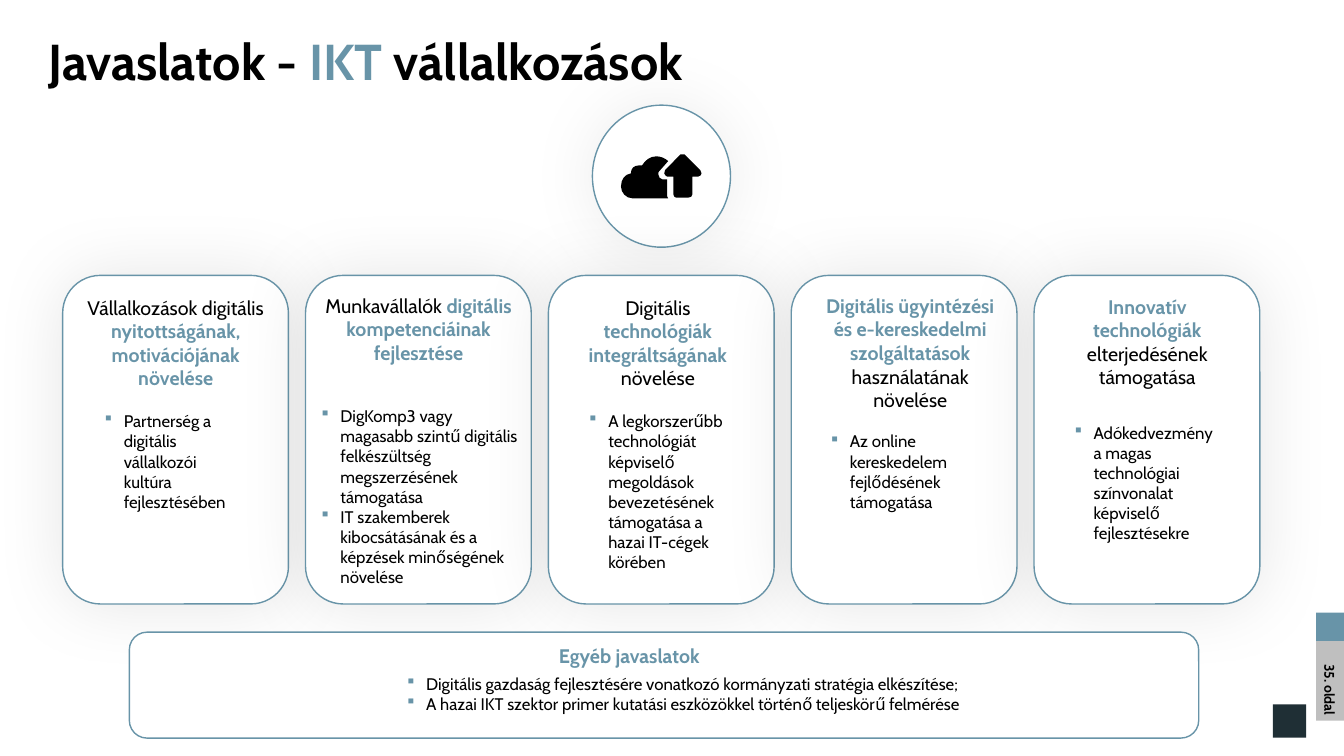
"""Build the slide of proposals for ICT enterprises."""
import pptx
import pptx.dml.color
import pptx.enum.shapes
import pptx.enum.text
import pptx.oxml
import pptx.oxml.ns
import pptx.util

Cm = pptx.util.Cm
Pt = pptx.util.Pt
qn = pptx.oxml.ns.qn
shape_kind = pptx.enum.shapes.MSO_SHAPE
align = pptx.enum.text.PP_ALIGN

COLORS = {"accent": "6894A8", "black": "000000", "white": "FFFFFF",
          "dark": "1F2F35", "gray": "BFBFBF"}
RGB = {name: pptx.dml.color.RGBColor.from_string(value) for name, value in COLORS.items()}

deck = pptx.Presentation()
deck.slide_width, deck.slide_height = Cm(33.87), Cm(19.05)
page = deck.slides.add_slide(deck.slide_layouts[6])


def add_panel(kind, place, fill, line=None, blur=None, alpha=None):
    """Add a filled preset shape, with an outline and a soft shadow if given."""
    panel = page.shapes.add_shape(kind, *map(Cm, place))
    panel.shadow.inherit = False
    panel.fill.solid()
    panel.fill.fore_color.rgb = RGB[fill]
    if line:
        panel.line.color.rgb = RGB[line]
        panel.line.width = Pt(1)
    else:
        panel.line.fill.background()
    if blur:
        effects = panel.element.spPr.find(qn("a:effectLst"))
        effects.append(pptx.oxml.parse_xml(
            f'<a:outerShdw xmlns:a="http://schemas.openxmlformats.org/drawingml/2006/main" '
            f'blurRad="{Pt(blur)}" dist="0" algn="ctr" rotWithShape="0">'
            f'<a:srgbClr val="{COLORS["black"]}"><a:alpha val="{alpha * 1000}"/></a:srgbClr>'
            f'</a:outerShdw>'))
    return panel


def write(place, paragraphs, size, alignment=align.LEFT, indent=None, panel=None):
    """Write paragraphs of (text, colour, bold) spans, bulleted if indented."""
    box = panel or page.shapes.add_textbox(*map(Cm, place))
    frame = box.text_frame
    frame.word_wrap = True
    for index, spans in enumerate(paragraphs):
        para = frame.paragraphs[0] if index == 0 else frame.add_paragraph()
        para.alignment = alignment
        if indent:
            properties = para._p.get_or_add_pPr()
            properties.set("marL", str(Cm(indent)))
            properties.set("indent", str(Cm(-0.48)))
            color = properties.makeelement(qn("a:buClr"), {})
            color.append(color.makeelement(qn("a:srgbClr"), {"val": COLORS["accent"]}))
            properties.append(color)
            properties.append(properties.makeelement(qn("a:buFont"), {"typeface": "Wingdings"}))
            properties.append(properties.makeelement(qn("a:buChar"), {"char": "§"}))
        for text, color, bold in spans:
            span = para.add_run()
            span.text = text
            formats = {"name": "Cabin", "size": Pt(size), "bold": bold}
            for name, value in formats.items():
                setattr(span.font, name, value)
            span.font.color.rgb = RGB[color]
    return frame


add_panel(shape_kind.RECTANGLE, (32.08, 17.75, 0.84, 0.84), "dark")
title = write((0.97, 0.81, 24.66, 1.96),
              [[("Javaslatok - ", "black", True), ("IKT ", "accent", True),
                ("vállalkozások", "black", True)]], 36)
title.paragraphs[0].line_spacing = 0.9

add_panel(shape_kind.OVAL, (14.93, 2.65, 3.48, 3.58), "white", "accent", 49, 7)

cloud = [(1681, 493), (1681, 495, 1684, 500, 1684, 500), (1595, 500),
         (1577, 500, 1565, 485, 1565, 470), (1565, 452, 1575, 439, 1590, 437),
         (1590, 424, 1598, 417, 1610, 417), (1613, 417, 1615, 417, 1618, 417),
         (1626, 404, 1638, 394, 1654, 394), (1666, 394, 1676, 399, 1684, 406),
         (1661, 432), (1659, 432, 1659, 437, 1659, 439),
         (1659, 445, 1664, 452, 1669, 452), (1681, 452)]
arrow = [(1722, 389), (1715, 389), (1676, 429),
         (1674, 432, 1674, 434, 1674, 437), (1674, 439, 1679, 445, 1681, 445),
         (1697, 445), (1697, 490), (1697, 495, 1702, 498, 1704, 498),
         (1735, 498), (1740, 498, 1745, 495, 1745, 490), (1745, 445),
         (1760, 445), (1765, 445, 1768, 439, 1768, 437),
         (1768, 434, 1765, 432, 1765, 429), (1725, 389)]
for outline in (cloud, arrow):
    builder = page.shapes.build_freeform(*outline[0], scale=Cm(0.01))
    for segment in outline[1:]:
        builder.add_line_segments(list(zip(segment[::2], segment[1::2])), close=False)
    builder.add_line_segments([], close=True)
    icon = builder.convert_to_shape()
    icon.shadow.inherit = False
    icon.fill.solid()
    icon.fill.fore_color.rgb = RGB["black"]
    icon.line.fill.background()
    pieces = iter(list(icon.element.iter(qn("a:lnTo"))))
    for segment in outline[1:]:
        first = next(pieces)
        if len(segment) == 6:
            curve = first.makeelement(qn("a:cubicBezTo"), {})
            first.addprevious(curve)
            for piece in (first, next(pieces), next(pieces)):
                curve.append(piece[0])
                piece.getparent().remove(piece)

cards = [
    ((1.79, 7.32, 5.28, 3.25),
     [("Vállalkozások digitális ", "black", False),
      ("nyitottságának, motivációjának növelése", "accent", True)],
     (2.39, 10.23, 4.09, 3.33),
     ["Partnerség a digitális vállalkozói kultúra fejlesztésében"]),
    ((7.87, 7.27, 5.36, 2.64),
     [("Munkavállalók ", "black", False),
      ("digitális kompetenciáinak fejlesztése", "accent", True)],
     (7.85, 10.1, 5.64, 4.88),
     ["DigKomp3 vagy magasabb szintű digitális felkészültség megszerzésének támogatása",
      "IT szakemberek kibocsátásának és a képzések minőségének növelése"]),
    ((14.33, 7.32, 4.5, 2.64),
     [("Digitális ", "black", False),
      ("technológiák integráltságának ", "accent", True),
      ("növelése", "black", False)],
     (14.6, 10.23, 4.14, 4.37),
     ["A legkorszerűbb technológiát képviselő megoldások bevezetésének "
      "támogatása a hazai IT-cégek körében"]),
    ((20.49, 7.28, 4.9, 3.25),
     [("Digitális ügyintézési és e-kereskedelmi szolgáltatások ", "accent", True),
      ("használatának növelése", "black", False)],
     (20.69, 10.74, 4.14, 2.31),
     ["Az online kereskedelem fejlődésének támogatása"]),
    ((26.97, 7.3, 3.89, 2.64),
     [("Innovatív technológiák ", "accent", True),
      ("elterjedésének támogatása", "black", False)],
     (26.83, 10.52, 4.14, 3.33),
     ["Adókedvezmény a magas technológiai színvonalat képviselő fejlesztésekre"]),
]
for index, (heading_place, heading, list_place, items) in enumerate(cards):
    add_panel(shape_kind.ROUNDED_RECTANGLE, (1.58 + 6.12 * index, 6.94, 5.69, 8.28),
              "white", "accent", 52, 9)
    write(heading_place, [heading], 14, align.CENTER)
    write(list_place, [[(item, "black", False)] for item in items], 12, indent=0.48)

add_panel(shape_kind.ROUNDED_RECTANGLE, (3.26, 15.93, 26.95, 2.67), "white", "accent")
write((12.62, 16.1, 6.48, 0.86), [[("Egyéb javaslatok", "accent", True)]], 14, align.CENTER)
other_items = [
    "Digitális gazdaság fejlesztésére vonatkozó kormányzati stratégia elkészítése;",
    "A hazai IKT szektor primer kutatási eszközökkel történő teljeskörű felmérése",
]
write((2.51, 16.85, 26.64, 1.27), [[(item, "black", False)] for item in other_items],
      12, indent=7.98)

page_tab = add_panel(shape_kind.RECTANGLE, (33.17, 16.15, 0.7, 2.01), "gray")
page_label = write(None, [[("35. oldal", "black", True)]], 10, align.RIGHT, panel=page_tab)
page_label.vertical_anchor = pptx.enum.text.MSO_ANCHOR.MIDDLE
page_label._txBody.bodyPr.set("vert", "vert")
for side in ("left", "top", "right", "bottom"):
    setattr(page_label, f"margin_{side}", Cm(0.13))
add_panel(shape_kind.RECTANGLE, (33.17, 15.44, 0.7, 0.71), "accent")

deck.save("out.pptx")
